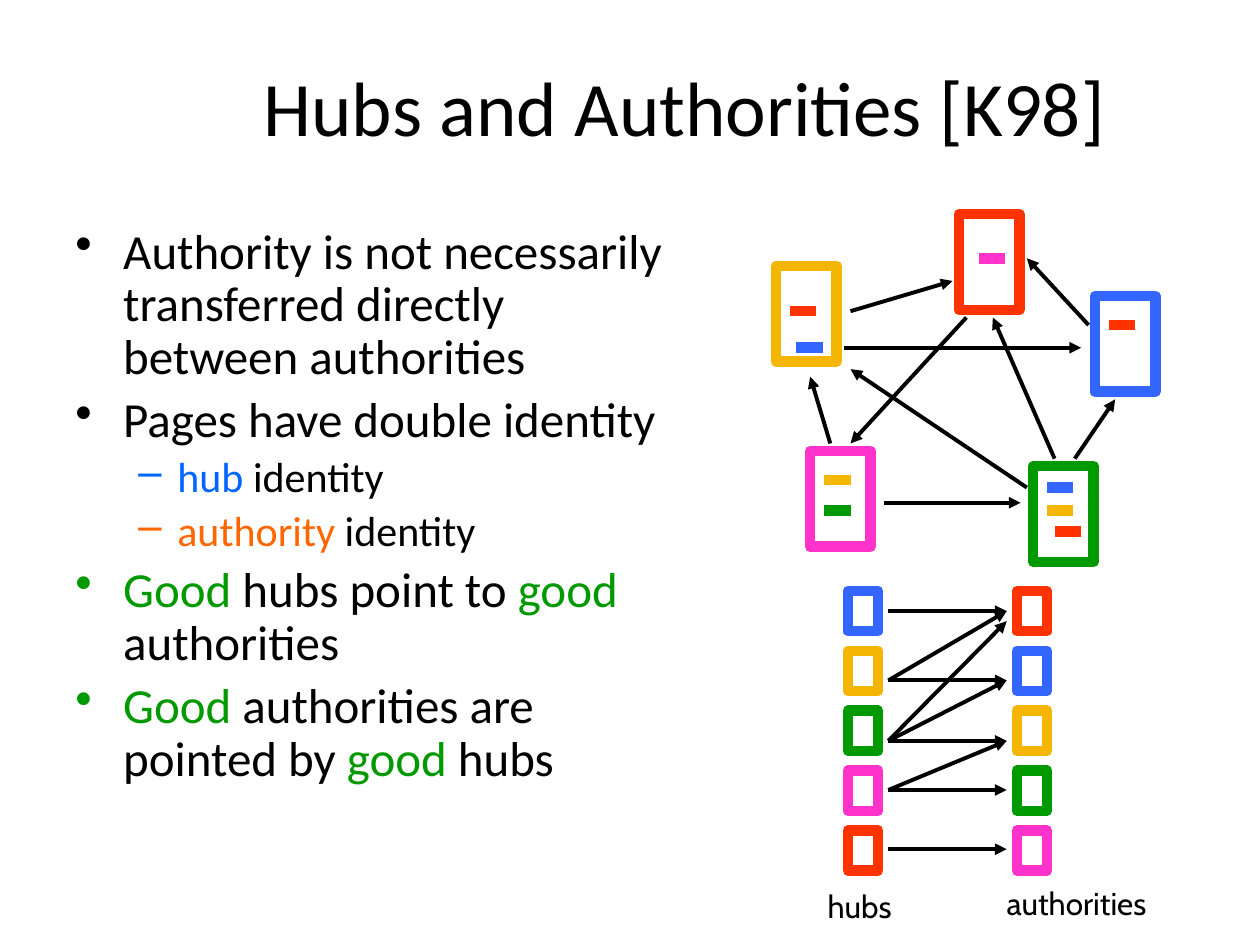
from pptx import Presentation
from pptx.dml.color import RGBColor
from pptx.enum.shapes import MSO_CONNECTOR, MSO_SHAPE
from pptx.enum.text import MSO_ANCHOR, PP_ALIGN
from pptx.oxml.ns import qn
from pptx.util import Inches, Pt
from lxml.etree import SubElement

BLACK = RGBColor(0x00, 0x00, 0x00)
WHITE = RGBColor(0xFF, 0xFF, 0xFF)
YELLOW = RGBColor(0xF5, 0xB6, 0x03)
PINK = RGBColor(0xFF, 0x33, 0xCC)
GREEN = RGBColor(0x00, 0x99, 0x00)
BLUE = RGBColor(0x33, 0x66, 0xFF)
RED = RGBColor(0xFF, 0x33, 0x00)
HUB_BLUE = RGBColor(0x00, 0x66, 0xFF)
AUTH_ORANGE = RGBColor(0xFF, 0x66, 0x00)

TITLE = "Hubs and Authorities [K98]"

# (level, [(text, colour), ...])
BULLETS = [
    (0, [("Authority is not necessarily transferred directly between authorities", BLACK)]),
    (0, [("Pages have double identity", BLACK)]),
    (1, [("hub", HUB_BLUE), (" identity", BLACK)]),
    (1, [("authority", AUTH_ORANGE), (" identity", BLACK)]),
    (0, [("Good", GREEN), (" hubs point to ", BLACK), ("good", GREEN), (" authorities", BLACK)]),
    (0, [("Good", GREEN), (" authorities are pointed by ", BLACK), ("good ", GREEN), ("hubs", BLACK)]),
]
# level: (bullet, size, left margin, hanging indent)
LEVELS = {0: ("•", 28, 0.38, 0.38), 1: ("–", 24, 0.81, 0.31)}

# Web pages: (left, top, colour, [(link left, link y, link colour), ...])
PAGES = [
    (6.16, 2.11, YELLOW, [(6.32, 2.76, BLUE), (6.27, 2.47, RED)]),
    (6.43, 3.58, PINK, [(6.54, 3.81, YELLOW), (6.54, 4.05, GREEN)]),
    (8.2, 3.7, GREEN, [(8.31, 3.87, BLUE), (8.31, 4.05, YELLOW), (8.37, 4.22, RED)]),
    (8.69, 2.35, BLUE, [(8.8, 2.58, RED)]),
    (7.61, 1.7, RED, [(7.77, 2.05, PINK)]),
]
PAGE_W, PAGE_H, LINK_W = 0.48, 0.76, 0.21
PAGE_ARROWS = [
    (7.02, 3.99, 8.1, 3.99), (7.67, 2.52, 6.75, 3.52), (6.59, 3.52, 6.43, 2.99),
    (6.75, 2.47, 7.56, 2.23), (6.7, 2.76, 8.58, 2.76), (8.64, 2.58, 8.15, 2.05),
    (8.37, 3.64, 7.88, 2.52), (8.53, 3.64, 8.85, 3.17), (8.15, 3.87, 6.75, 2.93),
]

# Bipartite graph: (left, colours from top to bottom)
COLUMNS = [
    (6.73, [BLUE, YELLOW, GREEN, PINK, RED]),
    (8.07, [RED, BLUE, YELLOW, GREEN, PINK]),
]
NODE_TOP, NODE_STEP, NODE_W, NODE_H = 4.69, 0.475, 0.24, 0.32
EDGE_LEFT, EDGE_RIGHT = 7.05, 7.99
EDGES = [  # (y at the hub, y values at the authorities)
    (4.85, [4.85]), (5.4, [4.85, 5.4]), (5.88, [5.88, 5.4, 4.93]),
    (6.27, [6.27, 5.88]), (6.74, [6.74]),
]
LABELS = [("hubs", 6.47, 6.99, 0.73), ("authorities", 7.89, 6.97, 1.36)]


def add_text(left, top, width, height, wrap=True):
    s = slide.shapes.add_textbox(*map(Inches, (left, top, width, height)))
    s.text_frame.word_wrap = wrap
    return s.text_frame


def add_run(p, text, font, size, color):
    r = p.add_run()
    r.text = text
    r.font.name = font
    r.font.size = Pt(size)
    r.font.color.rgb = color


def add_box(left, top, width, height, color):
    s = slide.shapes.add_shape(MSO_SHAPE.RECTANGLE, *map(Inches, (left, top, width, height)))
    s.shadow.inherit = False
    s.fill.solid()
    s.fill.fore_color.rgb = WHITE
    s.line.color.rgb = color
    s.line.width = Pt(6)


def add_line(x1, y1, x2, y2, color=BLACK, width=2.25, arrow=True):
    s = slide.shapes.add_connector(MSO_CONNECTOR.STRAIGHT, *map(Inches, (x1, y1, x2, y2)))
    s.line.color.rgb = color
    s.line.width = Pt(width)
    if arrow:
        SubElement(s.line._get_or_add_ln(), qn("a:tailEnd"), type="triangle")
    SubElement(s._element.spPr, qn("a:effectLst"))


prs = Presentation()
prs.slide_width, prs.slide_height = Inches(10), Inches(7.5)
slide = prs.slides.add_slide(prs.slide_layouts[6])

# Title
tf = add_text(1.22, 0.36, 8.43, 0.95)
tf.vertical_anchor = MSO_ANCHOR.MIDDLE
tf.paragraphs[0].alignment = PP_ALIGN.CENTER
add_run(tf.paragraphs[0], TITLE, "Calibri", 44, BLACK)

# Bulleted text
tf = add_text(0.5, 1.75, 5.03, 4.95)
for i, (level, runs) in enumerate(BULLETS):
    p = tf.add_paragraph() if i else tf.paragraphs[0]
    bullet, size, margin, hang = LEVELS[level]
    p.level = level
    p.line_spacing = 0.9
    p.space_before = Pt(size * 0.2)
    pPr = p._p.get_or_add_pPr()
    pPr.set("marL", str(Inches(margin)))
    pPr.set("indent", str(-Inches(hang)))
    SubElement(pPr, qn("a:buChar"), char=bullet)
    for text, color in runs:
        add_run(p, text, "Calibri", size, color)

# Graph of linked pages
for left, top, color, links in PAGES:
    add_box(left, top, PAGE_W, PAGE_H, color)
    for x, y, link_color in links:
        add_line(x, y, x + LINK_W, y, link_color, 6, arrow=False)
for arrow in PAGE_ARROWS:
    add_line(*arrow)

# Hubs and authorities as two columns
for left, colors in COLUMNS:
    for i, color in enumerate(colors):
        add_box(left, NODE_TOP + i * NODE_STEP, NODE_W, NODE_H, color)
for hub_y, authority_ys in EDGES:
    for authority_y in authority_ys:
        add_line(EDGE_LEFT, hub_y, EDGE_RIGHT, authority_y)
for text, left, top, width in LABELS:
    tf = add_text(left, top, width, 0.4, wrap=False)
    add_run(tf.paragraphs[0], text, "Cabin", 18, BLACK)

prs.save("out.pptx")
